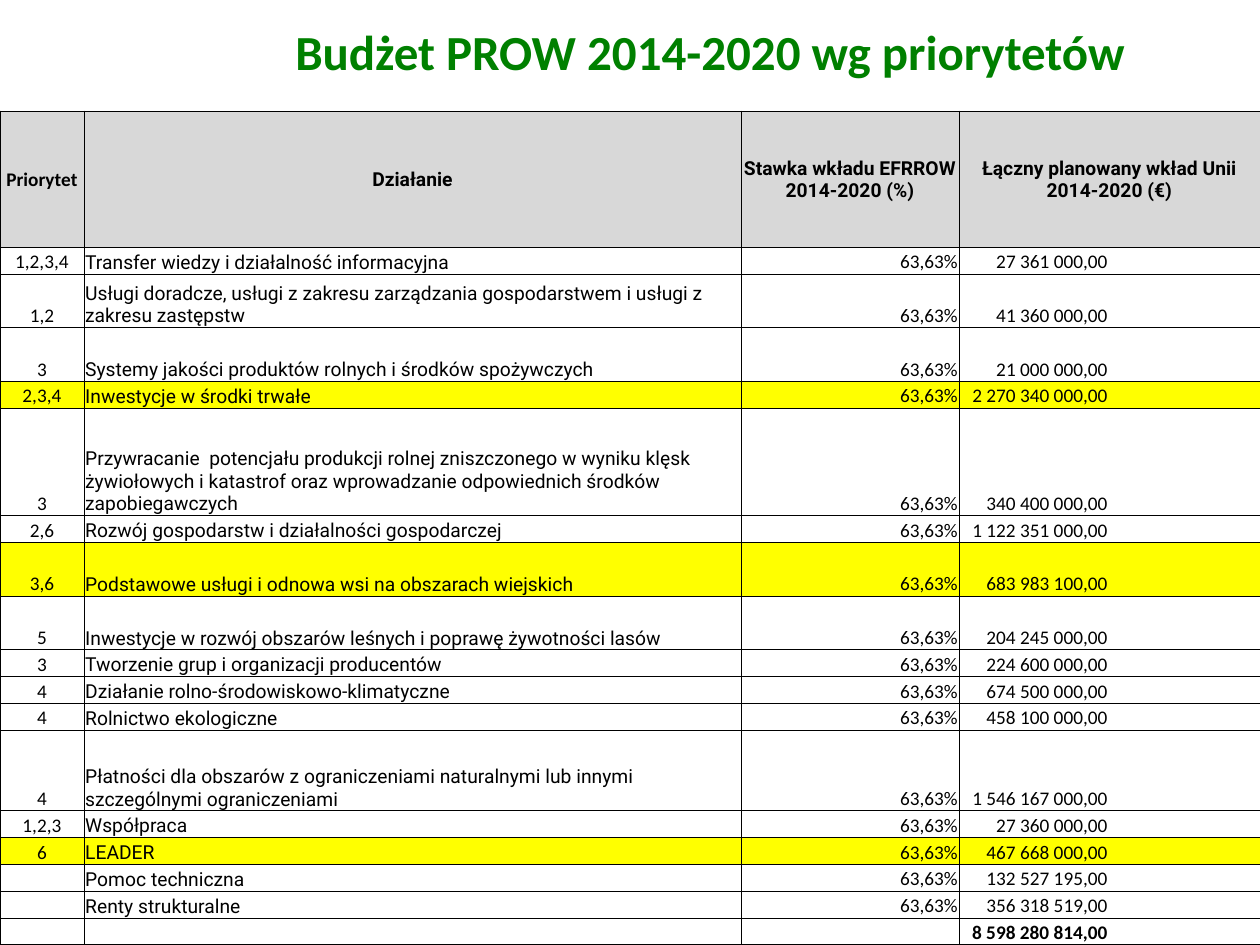
from lxml.etree import SubElement
from pptx import Presentation
from pptx.dml.color import RGBColor
from pptx.enum.text import MSO_ANCHOR, PP_ALIGN
from pptx.oxml.ns import qn
from pptx.util import Pt

GREEN = RGBColor(0x00, 0x80, 0x00)
BLACK = RGBColor(0x00, 0x00, 0x00)
GREY = RGBColor(0xD8, 0xD8, 0xD8)
WHITE = RGBColor(0xFF, 0xFF, 0xFF)
YELLOW = RGBColor(0xFF, 0xFF, 0x00)

LEFT, CENTER, RIGHT = PP_ALIGN.LEFT, PP_ALIGN.CENTER, PP_ALIGN.RIGHT
RATE = "63,63%"
HEADER_HEIGHT = 77.7
LINE_HEIGHT = 15.34
COLUMN_WIDTHS = [48, 375.5, 124.5, 172]
COLUMN_FONTS = ["Calibri", "Roboto", "Calibri", "Calibri"]
COLUMN_ALIGNS = [CENTER, LEFT, RIGHT, RIGHT]
AMOUNT_INSET = 87

HEADINGS = ["Priorytet", "Działanie", "Stawka wkładu EFRROW 2014-2020 (%)",
            "Łączny planowany wkład Unii 2014-2020 (€)"]
# Height in lines, priority, measure, amount
MEASURES = [
    (1, "1,2,3,4", "Transfer wiedzy i działalność informacyjna", "27 361 000,00"),
    (2, "1,2", "Usługi doradcze, usługi z zakresu zarządzania gospodarstwem i usługi z "
     "zakresu zastępstw", "41 360 000,00"),
    (2, "3", "Systemy jakości produktów rolnych i środków spożywczych", "21 000 000,00"),
    (1, "2,3,4", "Inwestycje w środki trwałe", "2 270 340 000,00"),
    (4, "3", "Przywracanie  potencjału produkcji rolnej zniszczonego w wyniku klęsk "
     "żywiołowych i katastrof oraz wprowadzanie odpowiednich środków "
     "zapobiegawczych", "340 400 000,00"),
    (1, "2,6", "Rozwój gospodarstw i działalności gospodarczej", "1 122 351 000,00"),
    (2, "3,6", "Podstawowe usługi i odnowa wsi na obszarach wiejskich", "683 983 100,00"),
    (2, "5", "Inwestycje w rozwój obszarów leśnych i poprawę żywotności lasów",
     "204 245 000,00"),
    (1, "3", "Tworzenie grup i organizacji producentów", "224 600 000,00"),
    (1, "4", "Działanie rolno-środowiskowo-klimatyczne", "674 500 000,00"),
    (1, "4", "Rolnictwo ekologiczne", "458 100 000,00"),
    (3, "4", "Płatności dla obszarów z ograniczeniami naturalnymi lub innymi "
     "szczególnymi ograniczeniami", "1 546 167 000,00"),
    (1, "1,2,3", "Współpraca", "27 360 000,00"),
    (1, "6", "LEADER", "467 668 000,00"),
    (1, "", "Pomoc techniczna", "132 527 195,00"),
    (1, "", "Renty strukturalne", "356 318 519,00"),
]
TOTAL = "8 598 280 814,00"
HIGHLIGHTED = {"Inwestycje w środki trwałe", "LEADER",
               "Podstawowe usługi i odnowa wsi na obszarach wiejskich"}


def write(frame, text, font="Calibri", size=11, color=BLACK, bold=False,
          align=LEFT, indent=0):
    frame.word_wrap = True
    paragraph = frame.paragraphs[0]
    paragraph.alignment = align
    if indent:
        paragraph._p.get_or_add_pPr().set("marL", str(Pt(indent)))
    if not text:  # an empty cell still needs its line height
        SubElement(paragraph._p, qn("a:endParaRPr"), sz=str(size * 100))
        return
    run = paragraph.add_run()
    run.text = text
    run.font.name = font
    run.font.size = Pt(size)
    run.font.bold = bold
    run.font.color.rgb = color


class BudgetSlide:
    border_width = 0.5
    inset = 0.7

    def __init__(self, presentation):
        self.slide = presentation.slides.add_slide(presentation.slide_layouts[6])

    def title(self, text, left, top, width, height):
        box = self.slide.shapes.add_textbox(Pt(left), Pt(top), Pt(width), Pt(height))
        box.text_frame.vertical_anchor = MSO_ANCHOR.MIDDLE
        write(box.text_frame, text, size=28, color=GREEN, bold=True,
              align=CENTER, indent=36)

    def table(self, left, top, widths, heights):
        frame = self.slide.shapes.add_table(
            len(heights), len(widths), Pt(left), Pt(top),
            Pt(sum(widths)), Pt(sum(heights)))
        grid = frame.table
        grid.horz_banding = False
        for column, width in zip(grid.columns, widths):
            column.width = Pt(width)
        for row, height in zip(grid.rows, heights):
            row.height = Pt(height)
        return grid

    def cell(self, cell, text, fill, anchor=MSO_ANCHOR.BOTTOM, right_inset=inset,
             **text_format):
        cell.margin_left = cell.margin_top = Pt(self.inset)
        cell.margin_right, cell.margin_bottom = Pt(right_inset), 0
        cell.vertical_anchor = anchor
        self.borders(cell)
        cell.fill.solid()
        cell.fill.fore_color.rgb = fill
        write(cell.text_frame, text, **text_format)

    def borders(self, cell):
        properties = cell._tc.get_or_add_tcPr()
        for side in ("lnL", "lnR", "lnT", "lnB"):
            line = SubElement(properties, qn(f"a:{side}"), w=str(Pt(self.border_width)))
            line_fill = SubElement(line, qn("a:solidFill"))
            SubElement(line_fill, qn("a:srgbClr"), val=str(BLACK))


def main():
    presentation = Presentation()
    presentation.slide_width, presentation.slide_height = Pt(720), Pt(540)
    budget = BudgetSlide(presentation)

    # Title
    budget.title("Budżet PROW 2014-2020 wg priorytetów", 76.3, 9.4, 622.8, 39.6)

    # Table grid: every body row is a whole number of lines high
    lines = [measure[0] for measure in MEASURES] + [1]
    heights = [HEADER_HEIGHT] + [count * LINE_HEIGHT for count in lines]
    grid = budget.table(0, 63.5, COLUMN_WIDTHS, heights)

    # Header row
    for column, (heading, font) in enumerate(
            zip(HEADINGS, ["Calibri", "Roboto", "Roboto", "Roboto"])):
        budget.cell(grid.cell(0, column), heading, GREY, MSO_ANCHOR.MIDDLE,
                    font=font, bold=True, align=CENTER)

    # Measures and total
    body = [(priority, measure, RATE, amount)
            for _, priority, measure, amount in MEASURES]
    body.append(("", "", "", TOTAL))
    for row, values in enumerate(body, start=1):
        fill = YELLOW if values[1] in HIGHLIGHTED else WHITE
        for column, value in enumerate(values):
            budget.cell(grid.cell(row, column), value, fill,
                        right_inset=AMOUNT_INSET if column == 3 else budget.inset,
                        font=COLUMN_FONTS[column], align=COLUMN_ALIGNS[column],
                        bold=value == TOTAL)

    presentation.save("out.pptx")


if __name__ == "__main__":
    main()
